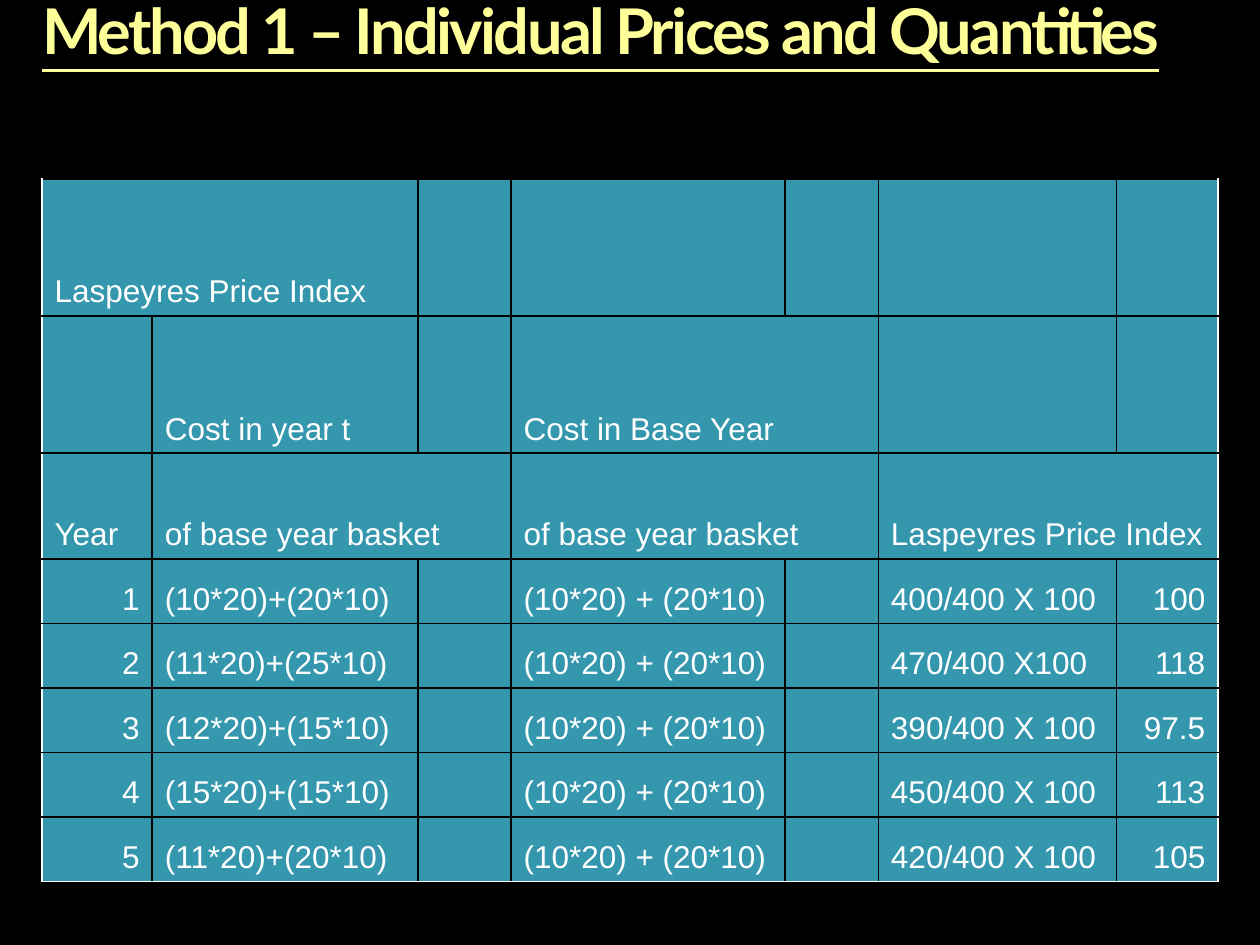
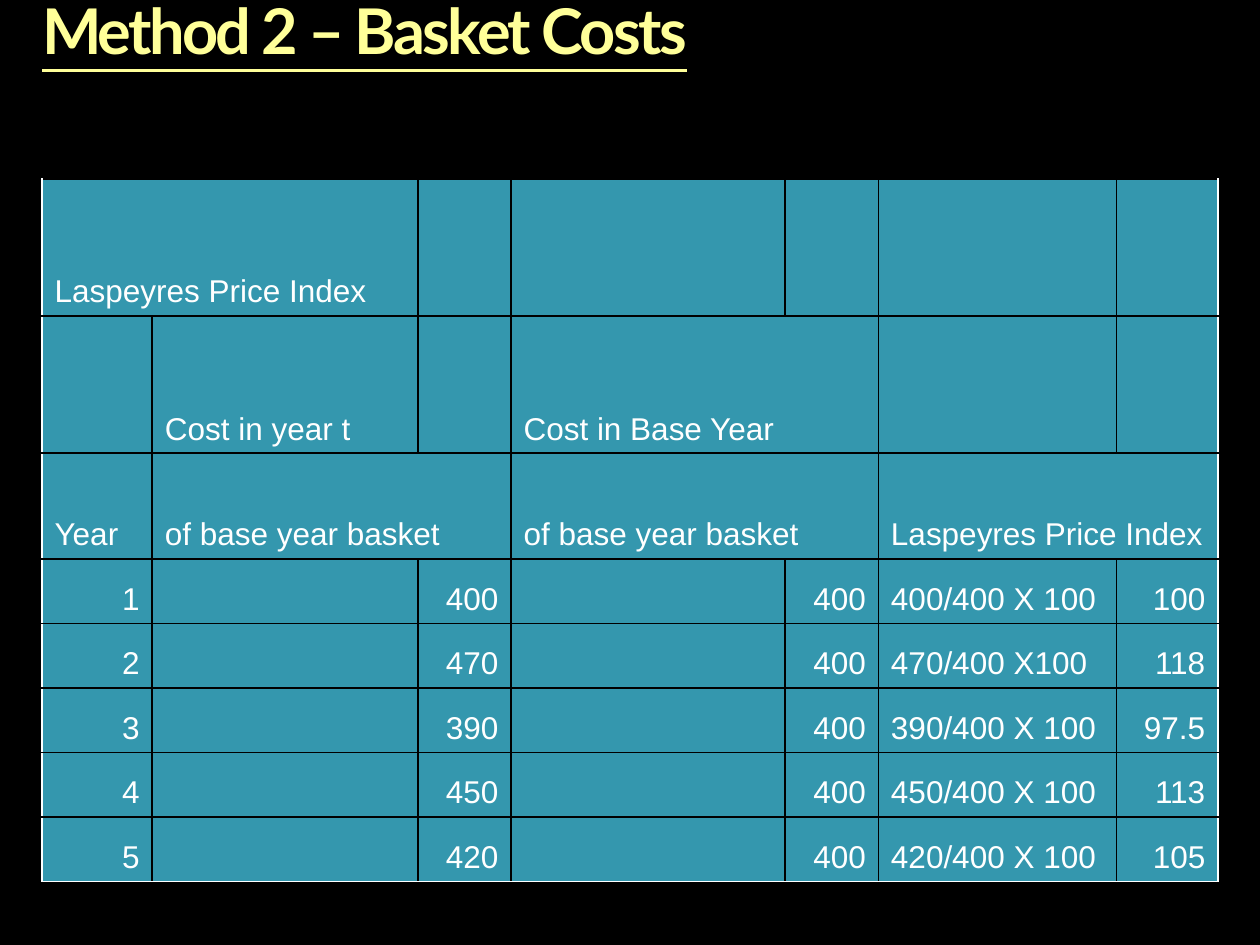
from dataclasses import dataclass
from functools import partial

from lxml import etree
from pptx import Presentation
from pptx import util as u
from pptx.dml.color import RGBColor
from pptx.enum import text as t
from pptx.oxml.ns import qn

Pt = u.Pt

MERGED = None
HEADERS = [
    ["Laspeyres Price Index", MERGED, "", "", "", "", ""],
    ["", "Cost in year t", "", "Cost in Base Year", MERGED, "", ""],
    ["Year", "of base year basket", MERGED, "of base year basket", MERGED,
     "Laspeyres Price Index", MERGED],
]
BASE_BASKET = "(10*20) + (20*10)"
BASE_COST = "400"
YEARS = [
    ("1", "(10*20)+(20*10)", "400", "400/400 X 100", "100"),
    ("2", "(11*20)+(25*10)", "470", "470/400 X100", "118"),
    ("3", "(12*20)+(15*10)", "390", "390/400 X 100", "97.5"),
    ("4", "(15*20)+(15*10)", "450", "450/400 X 100", "113"),
    ("5", "(11*20)+(20*10)", "420", "420/400 X 100", "105"),
]
SLIDES = [
    ("Method 1 – Individual Prices and Quantities",
     [[year, basket, "", BASE_BASKET, "", ratio, index]
      for year, basket, cost, ratio, index in YEARS]),
    ("Method 2 – Basket Costs",
     [[year, "", cost, "", BASE_COST, ratio, index]
      for year, basket, cost, ratio, index in YEARS]),
]

LEFT, TABLE_TOP, WIDTH, TITLE_HEIGHT = 24, 102.2, 672, 40
COLUMN_WIDTHS = [63, 152, 53, 156.75, 53.25, 136, 58]
ROW_HEIGHTS = [78.4, 78.4, 60.4] + [36.9] * len(YEARS)


@dataclass(frozen=True)
class Theme:
    background: str = "000000"
    title: str = "FFFF99"
    cell: str = "3497AE"
    text: str = "FFFFFF"
    inner_line: str = "000000"
    outer_line: str = "FFFFFF"
    line_width: float = 1
    title_font: str = "Lato"
    body_font: str = "Arial"
    title_size: int = 36
    body_size: int = 18


THEME = Theme()


def write(frame, content, *, font, size, color, bold=False, underline=False,
          align=t.PP_ALIGN.LEFT, line_spacing=None, tracking=None):
    paragraph = frame.paragraphs[0]
    paragraph.alignment = align
    paragraph.line_spacing = line_spacing
    run = paragraph.add_run()
    run.text = content
    run.font.name = font
    run.font.size = Pt(size)
    run.font.bold = bold
    run.font.underline = underline
    run.font.color.rgb = RGBColor.from_string(color)
    if tracking is not None:
        run.font._element.set("spc", str(round(tracking * 100)))


write_title = partial(write, font=THEME.title_font, size=THEME.title_size,
                      color=THEME.title, bold=True, underline=True,
                      line_spacing=0.9, tracking=-1.5)
write_cell = partial(write, font=THEME.body_font, size=THEME.body_size,
                     color=THEME.text)


def add_title(slide, title):
    shape = slide.shapes.add_textbox(Pt(LEFT), 0, Pt(WIDTH), Pt(TITLE_HEIGHT))
    frame = shape.text_frame
    frame.word_wrap = True
    frame.auto_size = t.MSO_AUTO_SIZE.SHAPE_TO_FIT_TEXT
    frame.margin_left = frame.margin_right = 0
    frame.margin_top = frame.margin_bottom = 0
    write_title(frame, title)


def set_borders(cell, outer_sides):
    properties = cell._tc.get_or_add_tcPr()
    for side in "LRTB":
        line = etree.SubElement(properties, qn(f"a:ln{side}"),
                                w=str(Pt(THEME.line_width)))
        fill = etree.SubElement(line, qn("a:solidFill"))
        color = THEME.outer_line if side in outer_sides else THEME.inner_line
        etree.SubElement(fill, qn("a:srgbClr"), val=color)


def add_index_table(slide, rows):
    shape = slide.shapes.add_table(len(rows), len(COLUMN_WIDTHS), Pt(LEFT),
                                   Pt(TABLE_TOP), Pt(WIDTH),
                                   Pt(sum(ROW_HEIGHTS)))
    table = shape.table
    table.first_row = table.horz_banding = False
    for column, width in zip(table.columns, COLUMN_WIDTHS):
        column.width = Pt(width)
    for row, height in zip(table.rows, ROW_HEIGHTS):
        row.height = Pt(height)

    for row_index, row in enumerate(rows):
        for column_index, content in enumerate(row):
            cell = table.cell(row_index, column_index)
            end = column_index
            while end + 1 < len(row) and row[end + 1] is MERGED:
                end += 1
            outer_sides = ("L" * (column_index == 0)
                           + "R" * (end == len(row) - 1)
                           + "B" * (row_index == len(rows) - 1))
            set_borders(cell, outer_sides)
            cell.fill.solid()
            cell.fill.fore_color.rgb = RGBColor.from_string(THEME.cell)
            cell.vertical_anchor = t.MSO_ANCHOR.BOTTOM
            if content is not MERGED and end > column_index:
                cell.merge(table.cell(row_index, end))
            if content:
                numeric = content.replace(".", "").isdigit()
                write_cell(cell.text_frame, content,
                           align=t.PP_ALIGN.RIGHT if numeric
                           else t.PP_ALIGN.LEFT)


def main():
    presentation = Presentation()
    presentation.slide_width, presentation.slide_height = Pt(720), Pt(540)
    for title, year_rows in SLIDES:
        slide = presentation.slides.add_slide(presentation.slide_layouts[6])
        background = slide.background.fill
        background.solid()
        background.fore_color.rgb = RGBColor.from_string(THEME.background)
        add_title(slide, title)
        add_index_table(slide, HEADERS + year_rows)
    presentation.save("out.pptx")


if __name__ == "__main__":
    main()
